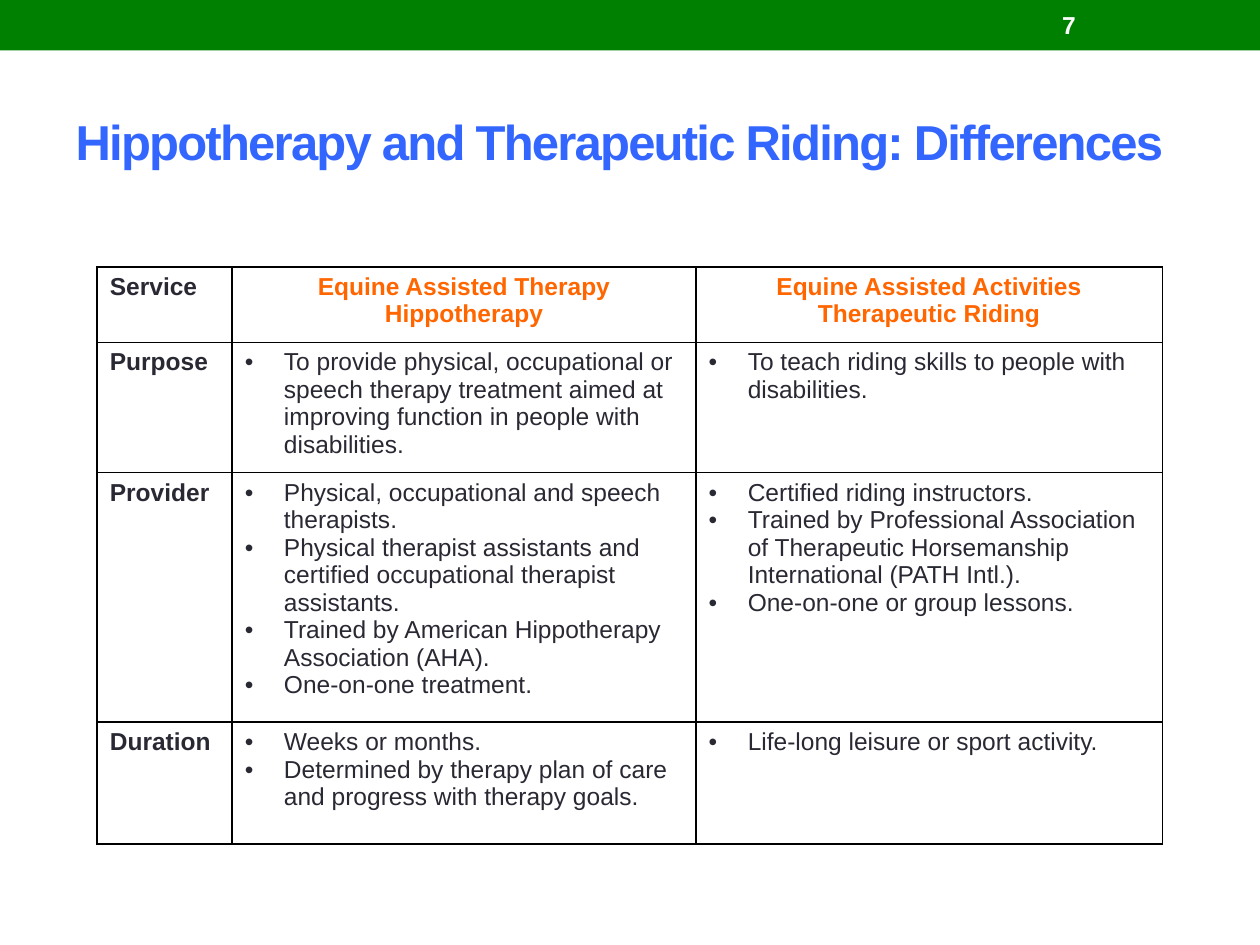
from dataclasses import dataclass

from lxml import etree
from pptx import Presentation
from pptx.dml.color import RGBColor
from pptx.enum import shapes, text
from pptx.oxml import ns
from pptx.util import Cm, Pt


@dataclass(frozen=True)
class Theme:
    font: str = "Arial"
    banner: str = "008000"
    title: str = "3366FF"
    heading: str = "FF6600"
    body: str = "292934"
    light: str = "FFFFFF"
    border: str = "000000"
    title_size: int = 28
    body_size: int = 14
    border_width: int = 1
    bullet_indent: float = 0.79


THEME = Theme()

COLUMN_WIDTHS = [2.72, 9.35, 9.4]
ROW_HEIGHTS = [1.52, 2.62, 5.03, 2.46]
HEADINGS = [
    ["Service"],
    ["Equine Assisted Therapy", "Hippotherapy"],
    ["Equine Assisted Activities", "Therapeutic Riding"],
]
COMPARISON = [
    (
        "Purpose",
        ["To provide physical, occupational or speech therapy treatment aimed at "
         "improving function in people with disabilities."],
        ["To teach riding skills to people with disabilities."],
    ),
    (
        "Provider",
        ["Physical, occupational and speech therapists.",
         "Physical therapist assistants and certified occupational therapist assistants.",
         "Trained by American Hippotherapy Association (AHA).",
         "One-on-one treatment."],
        ["Certified riding instructors.",
         "Trained by Professional Association of Therapeutic Horsemanship "
         "International (PATH Intl.).",
         "One-on-one or group lessons."],
    ),
    (
        "Duration",
        ["Weeks or months.",
         "Determined by therapy plan of care and progress with therapy goals."],
        ["Life-long leisure or sport activity."],
    ),
]


def write_text(frame, lines, *, color=THEME.body, size=THEME.body_size, bold=False,
               align=text.PP_ALIGN.LEFT, bullet=False, spacing=None):
    for index, line in enumerate(lines):
        paragraph = frame.add_paragraph() if index else frame.paragraphs[0]
        paragraph.alignment = align
        if bullet:
            properties = paragraph._p.get_or_add_pPr()
            indent = Cm(THEME.bullet_indent)
            properties.set("marL", str(indent))
            properties.set("indent", str(-indent))
            etree.SubElement(properties, ns.qn("a:buFont"), typeface=THEME.font)
            etree.SubElement(properties, ns.qn("a:buChar"), char="•")
        run = paragraph.add_run()
        run.text = line
        run.font.name = THEME.font
        run.font.size = Pt(size)
        run.font.bold = bold
        run.font.color.rgb = RGBColor.from_string(color)
        if spacing is not None:
            run._r.get_or_add_rPr().set("spc", str(spacing))


class SlideBuilder:
    def __init__(self, slide, theme):
        self.slide = slide
        self.theme = theme

    def banner(self, left, top, width, height):
        shape = self.slide.shapes.add_shape(
            shapes.MSO_SHAPE.RECTANGLE, Cm(left), Cm(top), Cm(width), Cm(height))
        shape.shadow.inherit = False
        shape.fill.solid()
        shape.fill.fore_color.rgb = RGBColor.from_string(self.theme.banner)
        shape.line.fill.background()

    def title(self, content, left, top, width, height):
        shape = self.slide.shapes.title
        shape.left, shape.top = Cm(left), Cm(top)
        shape.width, shape.height = Cm(width), Cm(height)
        shape.text_frame.vertical_anchor = text.MSO_ANCHOR.MIDDLE
        write_text(shape.text_frame, [content], color=self.theme.title,
                   size=self.theme.title_size, bold=True, spacing=-100)

    def page_number(self, number, left, top, width, height):
        shape = self.slide.shapes.add_textbox(Cm(left), Cm(top), Cm(width), Cm(height))
        shape.text_frame.word_wrap = True
        shape.text_frame.vertical_anchor = text.MSO_ANCHOR.MIDDLE
        write_text(shape.text_frame, [str(number)], color=self.theme.light, bold=True)

    def border(self, cell):
        properties = cell._tc.get_or_add_tcPr()
        for index, side in enumerate(("lnL", "lnR", "lnT", "lnB")):
            line = etree.Element(ns.qn(f"a:{side}"), w=str(Pt(self.theme.border_width)))
            fill = etree.SubElement(line, ns.qn("a:solidFill"))
            etree.SubElement(fill, ns.qn("a:srgbClr"), val=self.theme.border)
            properties.insert(index, line)

    def cell(self, cell, lines, **style):
        cell.fill.background()
        self.border(cell)
        write_text(cell.text_frame, lines, **style)

    def comparison_table(self, left, top):
        table = self.slide.shapes.add_table(
            len(ROW_HEIGHTS), len(COLUMN_WIDTHS), Cm(left), Cm(top),
            Cm(sum(COLUMN_WIDTHS)), Cm(sum(ROW_HEIGHTS))).table
        table.first_row = table.horz_banding = False
        for column, width in zip(table.columns, COLUMN_WIDTHS):
            column.width = Cm(width)
        for row, height in zip(table.rows, ROW_HEIGHTS):
            row.height = Cm(height)
        self.cell(table.cell(0, 0), HEADINGS[0], bold=True)
        for column, lines in enumerate(HEADINGS[1:], 1):
            self.cell(table.cell(0, column), lines, color=self.theme.heading,
                      bold=True, align=text.PP_ALIGN.CENTER)
        for row, (label, *details) in enumerate(COMPARISON, 1):
            self.cell(table.cell(row, 0), [label], bold=True)
            for column, lines in enumerate(details, 1):
                self.cell(table.cell(row, column), lines, bullet=True)


def main():
    presentation = Presentation()
    presentation.slide_width = Cm(25.4)
    presentation.slide_height = Cm(19.05)
    slide = presentation.slides.add_slide(
        presentation.slide_layouts.get_by_name("Title Only"))
    builder = SlideBuilder(slide, THEME)
    builder.banner(0, 0, 25.4, 1.02)
    builder.title("Hippotherapy and Therapeutic Riding: Differences",
                  1.27, 1.47, 22.86, 2.74)
    builder.page_number(7, 21.16, 0.05, 2.97, 0.91)
    builder.comparison_table(1.96, 5.38)
    presentation.save("out.pptx")


if __name__ == "__main__":
    main()
